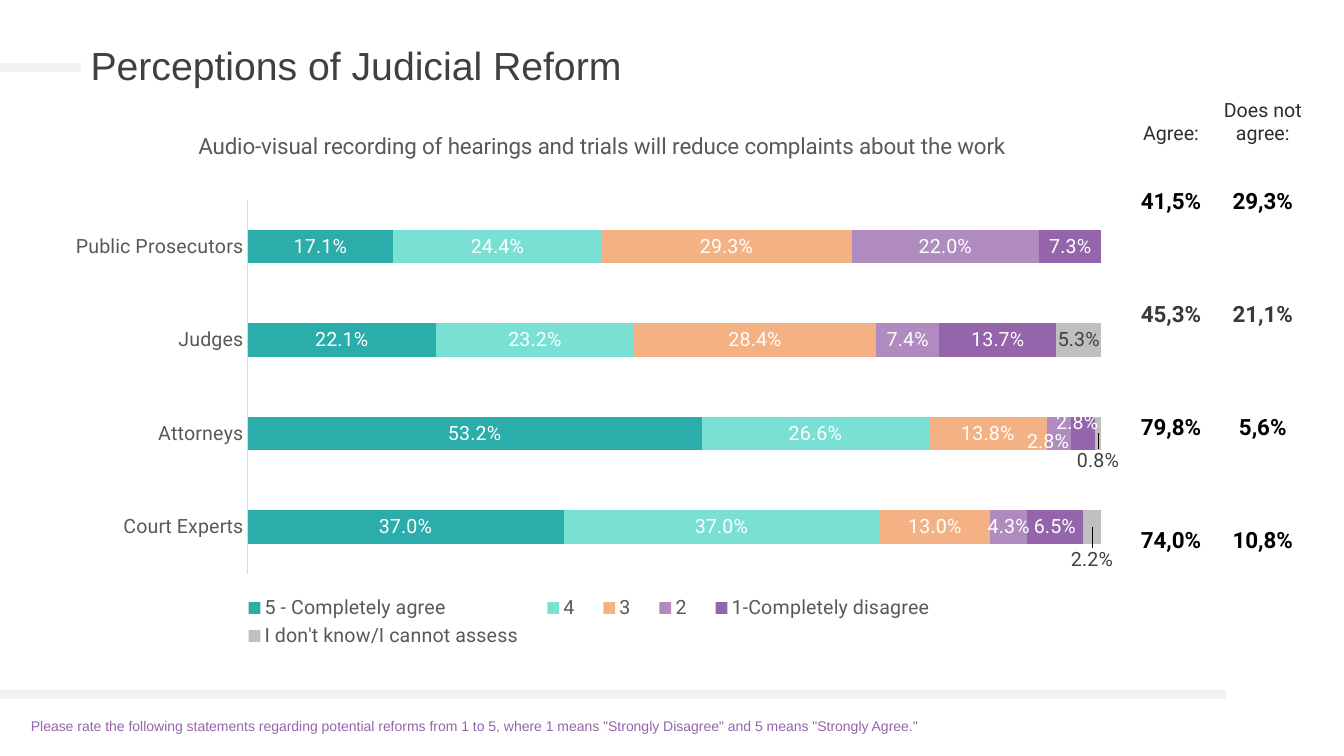
from lxml import etree
from pptx import Presentation
from pptx.chart.data import CategoryChartData
from pptx.dml.color import RGBColor
from pptx.enum import chart as ch, shapes, text
from pptx.oxml.ns import qn
from pptx.util import Pt

COLORS = {
    "title": "404040", "rule": "F2F2F2", "question": "9565AB",
    "header": "312C30", "strong": "000000", "soft": "3A3838",
    "chart_text": "595959", "axis": "D9D9D9", "light": "FFFFFF", "dark": "404040",
}
GROUPS = ["Public Prosecutors", "Judges", "Attorneys", "Court Experts"]
# answer, shares by group, bar colour, label colour, label shifts {group index: (x, y)}
ANSWERS = [
    ("5 - Completely agree", (0.171, 0.221, 0.532, 0.37), "2BAEAB", "light", {}),
    ("4", (0.244, 0.232, 0.266, 0.37), "7AE0D4", "light", {}),
    ("3", (0.293, 0.284, 0.138, 0.13), "F4B183", "light", {}),
    ("2", (0.22, 0.074, 0.028, 0.043), "AF8BBF", "light", {2: (-0.01, 0.015)}),
    ("1-Completely disagree", (0.073, 0.137, 0.028, 0.065), "9565AB", "light",
     {2: (-0.005, -0.02)}),
    ("I don't know/I cannot assess", (0, 0.053, 0.008, 0.022), "BFBFBF", "dark",
     {2: (0, 0.05), 3: (0, 0.06)}),
]
TOTALS = [
    ("Agree:", "Does not agree:"),
    ("41,5%", "29,3%"), ("45,3%", "21,1%"), ("79,8%", "5,6%"), ("74,0%", "10,8%"),
]


def rgb(name):
    return RGBColor.from_string(COLORS.get(name, name))


def style_font(font, size, color, face="Roboto", bold=False):
    font.size, font.name, font.bold = Pt(size), face, bold
    font.color.rgb = rgb(color)


def add_label(slide, words, box, size, color):
    label = slide.shapes.add_textbox(*map(Pt, box))
    label.text_frame.word_wrap = True
    run = label.text_frame.paragraphs[0].add_run()
    run.text = words
    style_font(run.font, size, color, "Arial")
    return label


def add_rule(slide, right, y):
    """Draw a thick grey line from the slide's left edge."""
    rule = slide.shapes.add_connector(
        shapes.MSO_CONNECTOR.STRAIGHT, 0, Pt(y), Pt(right), Pt(y))
    rule.line.color.rgb = rgb("rule")
    rule.line.width = Pt(6)
    etree.SubElement(rule._element.spPr, qn("a:effectLst"))
    return rule


def add_totals(slide):
    table = slide.shapes.add_table(
        len(TOTALS), 2, Pt(802), Pt(25.2), Pt(131), Pt(401)).table
    table.first_row = table.horz_banding = False
    for column, width in zip(table.columns, (69, 62)):
        column.width = Pt(width)
    for r, pair in enumerate(TOTALS):
        table.rows[r].height = Pt(80.6 if r else 78.5)
        for c, words in enumerate(pair):
            cell = table.cell(r, c)
            cell.fill.background()
            cell.margin_left = cell.margin_right = cell.margin_top = Pt(0.7)
            cell.margin_bottom = 0
            cell.vertical_anchor = text.MSO_ANCHOR.MIDDLE if r else text.MSO_ANCHOR.BOTTOM
            paragraph = cell.text_frame.paragraphs[0]
            paragraph.alignment = text.PP_ALIGN.CENTER
            run = paragraph.add_run()
            run.text = words
            color = "header" if r == 0 else "soft" if r == 2 else "strong"
            style_font(run.font, 16 if r else 14, color, bold=r > 0)


def make_layout(**places):
    layout = etree.Element(qn("c:layout"))
    manual = etree.SubElement(layout, qn("c:manualLayout"))
    for tag, value in places.items():
        etree.SubElement(manual, qn("c:" + tag)).set("val", str(value))
    return layout


def place(element, after, **places):
    """Give a chart part a manual layout, put after its child of the named tag."""
    for old in element.findall(qn("c:layout")):
        element.remove(old)
    layout = make_layout(**places)
    before = element.find(qn(after)) if after else None
    if before is None:
        element.insert(0, layout)
    else:
        before.addnext(layout)


def style_series(series, fill, label_color, shifts):
    series.format.fill.solid()
    series.format.fill.fore_color.rgb = rgb(fill)
    labels = series.data_labels
    labels.show_value = True
    labels.number_format = "0.0%;;"  # zero shares get no label
    labels.number_format_is_linked = False
    labels.position = ch.XL_LABEL_POSITION.CENTER
    style_font(labels.font, 14, label_color)
    for group in shifts:
        label = series.points[group].data_label
        style_font(label.font, 14, label_color)
        label.position = ch.XL_LABEL_POSITION.CENTER
    for item in labels._element.findall(qn("c:dLbl")):
        x, y = shifts[int(item.find(qn("c:idx")).get("val"))]
        place(item, "c:idx", x=x, y=y)


def add_answers(slide):
    data = CategoryChartData(number_format="0.0%")
    data.categories = GROUPS
    for name, shares, *_ in ANSWERS:
        data.add_series(name, shares)
    chart = slide.shapes.add_chart(
        ch.XL_CHART_TYPE.BAR_STACKED_100, Pt(39.6), Pt(75.6), Pt(762.5), Pt(390.2), data).chart
    style_font(chart.font, 14, "strong")

    run = chart.chart_title.text_frame.paragraphs[0].add_run()
    run.text = ("Audio-visual recording of hearings and trials "
                "will reduce complaints about the work")
    style_font(run.font, 16, "chart_text")
    chart.chart_title.include_in_layout = False
    place(chart.chart_title._element, "c:tx", xMode="edge", yMode="edge", x=0.13, y=0.04)

    plot = chart.plots[0]
    plot.gap_width, plot.overlap, plot.vary_by_categories = 182, 100, False
    for series, (_, _, fill, label_color, shifts) in zip(plot.series, ANSWERS):
        style_series(series, fill, label_color, shifts)
    place(chart._chartSpace.chart.plotArea, None, layoutTarget="inner",
          xMode="edge", yMode="edge", x=0.18, y=0.172, w=0.8, h=0.685)

    groups = chart.category_axis
    groups.reverse_order = True
    groups.major_tick_mark = ch.XL_TICK_MARK.NONE
    groups.format.line.color.rgb = rgb("axis")
    groups.format.line.width = Pt(0.75)
    style_font(groups.tick_labels.font, 14, "chart_text")
    shares = chart.value_axis
    shares.visible = shares.has_major_gridlines = False
    shares.minimum_scale, shares.maximum_scale = 0, 1

    chart.has_legend = True
    chart.legend.position = ch.XL_LEGEND_POSITION.BOTTOM
    chart.legend.include_in_layout = False
    style_font(chart.legend.font, 14, "chart_text")
    place(chart.legend._element, "c:legendPos", xMode="edge", yMode="edge",
          x=0.16, y=0.89, w=0.68, h=0.11)


def main():
    deck = Presentation()
    deck.slide_width, deck.slide_height = Pt(960), Pt(540)
    slide = deck.slides.add_slide(deck.slide_layouts[6])

    title_rule = add_rule(slide, 57.6, 48.2)
    title = add_label(slide, "Perceptions of Judicial Reform", (57.6, 16.5, 875.5, 63.4),
                      28, "title")
    title.text_frame.vertical_anchor = text.MSO_ANCHOR.MIDDLE
    title.text_frame.paragraphs[0].line_spacing = 0.9
    title_rule.end_connect(title, 1)

    add_rule(slide, 876, 496)
    add_totals(slide)
    question = add_label(
        slide,
        "Please rate the following statements regarding potential reforms from 1 to 5, "
        'where 1 means "Strongly Disagree" and 5 means "Strongly Agree."',
        (15, 509, 767, 19.4), 10, "question")
    question.text_frame.auto_size = text.MSO_AUTO_SIZE.SHAPE_TO_FIT_TEXT
    add_answers(slide)
    deck.save("out.pptx")


if __name__ == "__main__":
    main()
